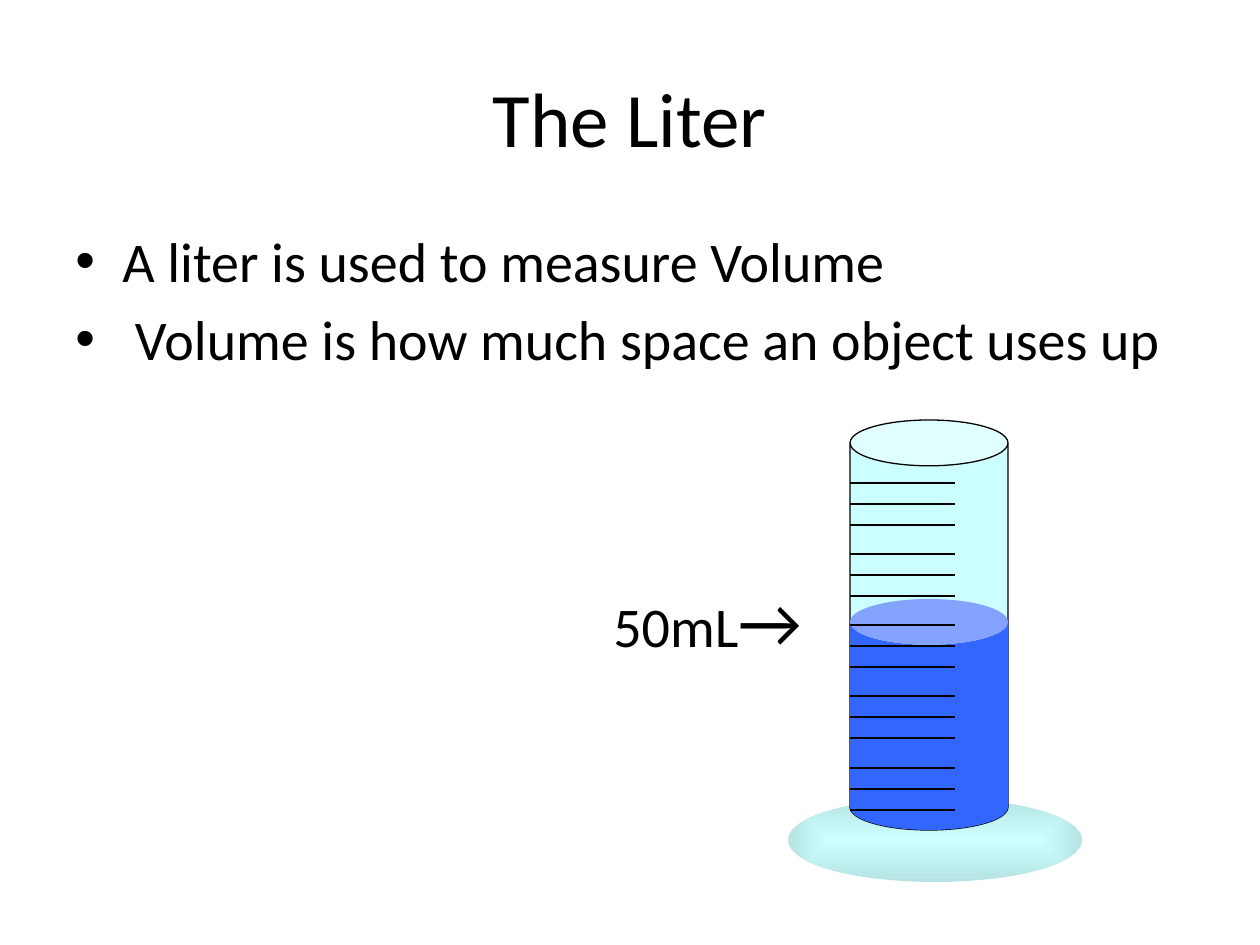
from lxml.etree import SubElement
from pptx import Presentation
from pptx.dml.color import RGBColor
from pptx.enum.shapes import MSO_CONNECTOR, MSO_SHAPE
from pptx.enum.text import MSO_ANCHOR, PP_ALIGN
from pptx.oxml import parse_xml
from pptx.oxml.ns import nsdecls, qn
from pptx.util import Emu, Pt

PX_PER_INCH = 126
FONT = "Calibri"
COLORS = {
    "ink": "000000",
    "glass": "CCFFFF",
    "base_edge": "B6E3E3",
    "water": "3366FF",
}


def px(length):
    return Emu(round(length * 914400 / PX_PER_INCH))


def color(name):
    return RGBColor.from_string(COLORS[name])


def add_text(slide, box, paragraphs, align, anchor, wrap=True):
    """Add a text box; each paragraph is a list of (text, size) runs."""
    frame = slide.shapes.add_textbox(*map(px, box)).text_frame
    frame.word_wrap = wrap
    frame.vertical_anchor = anchor
    for index, runs in enumerate(paragraphs):
        paragraph = frame.add_paragraph() if index else frame.paragraphs[0]
        paragraph.alignment = align
        for text, size in runs:
            run = paragraph.add_run()
            run.text = text
            run.font.name = FONT
            run.font.size = Pt(size)
            run.font.color.rgb = color("ink")
    return frame


def add_bullet(paragraph, indent):
    paragraph.space_before = Pt(6.4)
    properties = paragraph._p.get_or_add_pPr()
    properties.set("marL", str(px(indent)))
    properties.set("indent", str(-px(indent)))
    SubElement(properties, qn("a:buFont"), typeface="Arial")
    SubElement(properties, qn("a:buChar"), char="•")


def add_solid(slide, kind, box, fill, outlined=False):
    shape = slide.shapes.add_shape(kind, *map(px, box))
    shape.shadow.inherit = False
    shape.fill.solid()
    shape.fill.fore_color.rgb = color(fill)
    if outlined:
        shape.line.color.rgb = color("ink")
        shape.line.width = Pt(0.75)
    else:
        shape.line.fill.background()
    return shape


def shade_from_center(shape, center, edge):
    """Replace the solid fill by a gradient that follows the outline."""
    gradient = parse_xml(
        f'<a:gradFill {nsdecls("a")} rotWithShape="1"><a:gsLst>'
        f'<a:gs pos="0"><a:srgbClr val="{COLORS[center]}"/></a:gs>'
        f'<a:gs pos="100000"><a:srgbClr val="{COLORS[edge]}"/></a:gs>'
        '</a:gsLst><a:path path="shape">'
        '<a:fillToRect l="50000" t="50000" r="50000" b="50000"/>'
        '</a:path></a:gradFill>'
    )
    properties = shape._element.spPr
    properties.replace(properties.find(qn("a:solidFill")), gradient)


def add_can(slide, box, fill, rim, outlined=False):
    can = add_solid(slide, MSO_SHAPE.CAN, box, fill, outlined)
    can.adjustments[0] = rim


def add_graduations(slide, left, top, width):
    """Draw five groups of three evenly spaced marks."""
    for group in range(5):
        for mark in range(3):
            y = top + group * 285 // 4 + mark * 21
            line = slide.shapes.add_connector(
                MSO_CONNECTOR.STRAIGHT, px(left), px(y), px(left + width), px(y)
            )
            line.line.color.rgb = color("ink")
            line.line.width = Pt(1)
            SubElement(line._element.spPr, qn("a:effectLst"))


def add_cylinder(slide):
    base = add_solid(slide, MSO_SHAPE.OVAL, (788, 798, 294, 84), "glass")
    shade_from_center(base, "glass", "base_edge")
    add_can(slide, (850, 420, 158, 410), "glass", 0.29, outlined=True)
    add_can(slide, (850, 599, 158, 231), "water", 0.29)
    add_graduations(slide, 850, 483, 105)


def main():
    presentation = Presentation()
    presentation.slide_width = px(1260)
    presentation.slide_height = px(945)
    slide = presentation.slides.add_slide(presentation.slide_layouts[6])

    add_text(slide, (63, 38, 1134, 157), [[("The Liter", 44)]],
             PP_ALIGN.CENTER, MSO_ANCHOR.MIDDLE)
    facts = [
        [("A liter is used to measure Volume", 32)],
        [(" Volume is how much space an object uses up", 32)],
    ]
    body = add_text(slide, (63, 220, 1134, 624), facts,
                    PP_ALIGN.LEFT, MSO_ANCHOR.TOP)
    for paragraph in body.paragraphs:
        add_bullet(paragraph, 47)

    add_cylinder(slide)
    add_text(slide, (588, 577, 252, 84), [[("50mL", 32), ("→", 40), (" ", 32)]],
             PP_ALIGN.CENTER, MSO_ANCHOR.MIDDLE, wrap=False)

    presentation.save("out.pptx")


if __name__ == "__main__":
    main()
